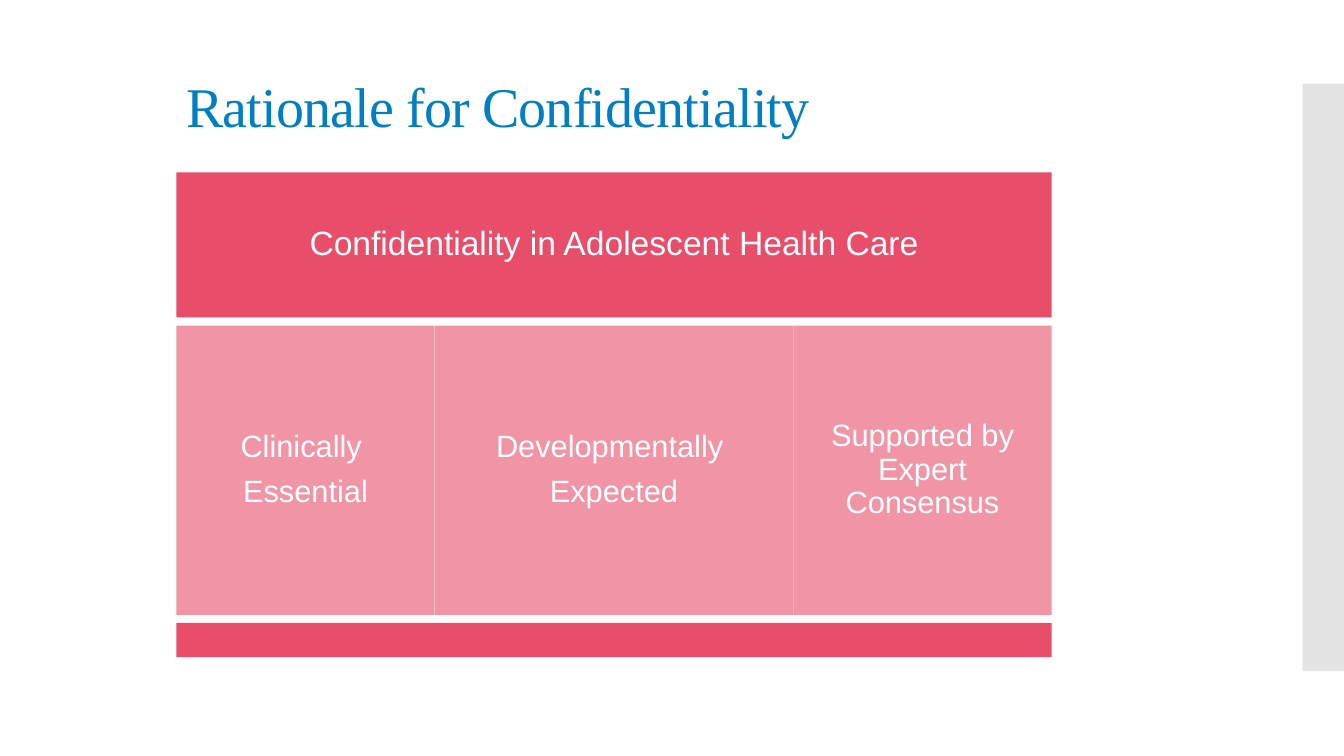
import pptx
import pptx.dml.color
import pptx.enum.shapes
import pptx.enum.text
import pptx.oxml
import pptx.oxml.ns
import pptx.util
from pptx.util import Inches

ROSE = "E84D69"
PALE_ROSE = "F194A5"
WHITE = "FFFFFF"
TITLE_BLUE = "007FC4"
STRIP_GREY = "C8C8C8"

ROW_GAP = 0.08
HEADER_HEIGHT = 1.44
REASONS_HEIGHT = 2.87
FOOTER_HEIGHT = 0.34
REASONS = [
    (2.56, ["Clinically ", "Essential"]),
    (3.56, ["Developmentally ", "Expected"]),
    (2.56, ["Supported by Expert Consensus"]),
]


def color(hex_value):
    return pptx.dml.color.RGBColor.from_string(hex_value)


def write(frame, lines, inset, paragraph_format, font_format, font_color):
    """Fill a text frame with one equally formatted paragraph per line."""
    frame.word_wrap = True
    frame.vertical_anchor = pptx.enum.text.MSO_ANCHOR.MIDDLE
    for side, length in inset.items():
        setattr(frame, f"margin_{side}", Inches(length))
    for index, line in enumerate(lines):
        paragraph = frame.paragraphs[0] if index == 0 else frame.add_paragraph()
        for name, value in paragraph_format.items():
            setattr(paragraph, name, value)
        run = paragraph.add_run()
        run.text = line
        for name, value in font_format.items():
            setattr(run.font, name, value)
        run.font.color.rgb = color(font_color)


def add_block(slide, left, top, width, height, fill, lines=(), size=22, inset=0.09):
    block = slide.shapes.add_shape(
        pptx.enum.shapes.MSO_SHAPE.RECTANGLE,
        Inches(left), Inches(top), Inches(width), Inches(height))
    block.shadow.inherit = False
    block.fill.solid()
    block.fill.fore_color.rgb = color(fill)
    block.line.fill.background()
    write(block.text_frame, lines,
          dict.fromkeys(("left", "top", "right", "bottom"), inset),
          {"alignment": pptx.enum.text.PP_ALIGN.CENTER, "line_spacing": 0.9,
           "space_after": pptx.util.Pt(round(size * 0.385, 1))},
          {"name": "Arial", "size": pptx.util.Pt(size)}, WHITE)
    return block


def add_side_strip(slide, left, top, width, height):
    strip = add_block(slide, left, top, width, height, STRIP_GREY)
    fill_color = strip.fill._xPr.find(".//" + pptx.oxml.ns.qn("a:srgbClr"))
    fill_color.append(pptx.oxml.parse_xml(
        f'<a:alpha {pptx.oxml.ns.nsdecls("a")} val="50000"/>'))


def add_title(slide, left, top, width, height):
    title = slide.shapes.add_textbox(
        Inches(left), Inches(top), Inches(width), Inches(height))
    write(title.text_frame, ["Rationale for Confidentiality"],
          {"left": 0.1, "top": 0.05, "right": 0.1, "bottom": 0.05},
          {"line_spacing": 0.9},
          {"name": "Times New Roman", "size": pptx.util.Pt(40)}, TITLE_BLUE)
    title_run = title.text_frame.paragraphs[0].runs[0]
    title_run.font._element.set("spc", "-60")


def add_rationale(slide, left, top):
    """Stack the header, the row of reasons and the footer bar."""
    width = sum(reason_width for reason_width, _ in REASONS)
    add_block(slide, left, top, width, HEADER_HEIGHT, ROSE,
              ["Confidentiality in Adolescent Health Care"], size=24, inset=0.1)
    top += HEADER_HEIGHT + ROW_GAP
    reason_left = left
    for reason_width, lines in REASONS:
        add_block(slide, reason_left, top, reason_width, REASONS_HEIGHT,
                  PALE_ROSE, lines)
        reason_left += reason_width
    top += REASONS_HEIGHT + ROW_GAP
    add_block(slide, left, top, width, FOOTER_HEIGHT, ROSE)


def main():
    deck = pptx.Presentation()
    deck.slide_width = Inches(13.33)
    deck.slide_height = Inches(7.5)
    slide = deck.slides.add_slide(deck.slide_layouts[6])
    add_side_strip(slide, 12.92, 0.83, 0.41, 5.83)
    add_title(slide, 1.75, 0.46, 10, 1.25)
    add_rationale(slide, 1.75, 1.71)
    deck.save("out.pptx")


if __name__ == "__main__":
    main()
